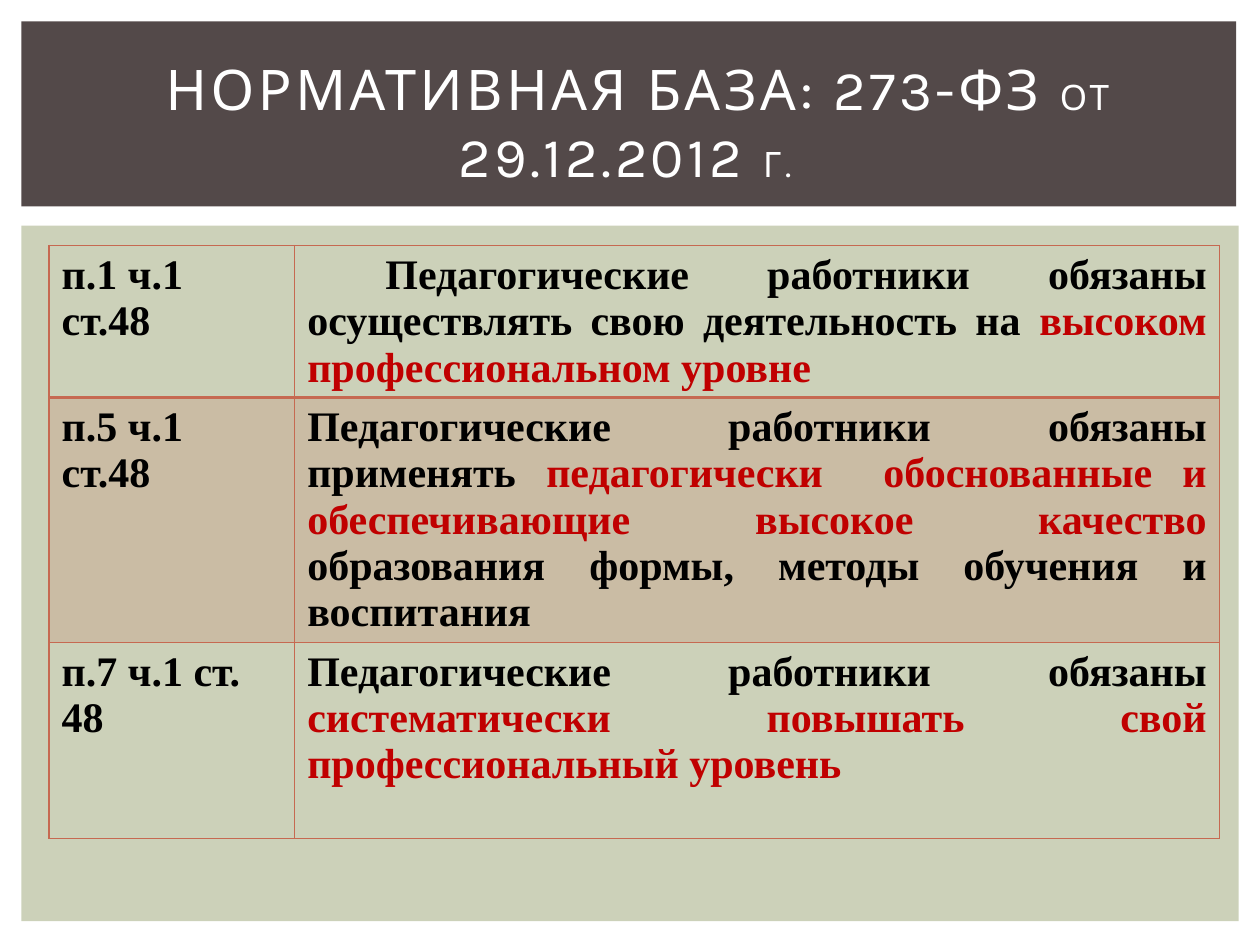
from dataclasses import dataclass

from lxml.etree import SubElement
from pptx import Presentation
from pptx.dml.color import RGBColor
from pptx.enum.shapes import MSO_SHAPE as Preset
from pptx.enum.text import MSO_ANCHOR as Anchor, PP_ALIGN as Align
from pptx.oxml import parse_xml
from pptx.oxml.ns import nsdecls, qn
from pptx.slide import Slide
from pptx.table import _Cell as Cell
from pptx.util import Cm, Pt

WHITE = RGBColor(0xFF, 0xFF, 0xFF)
BLACK = RGBColor(0, 0, 0)
RED = RGBColor(0xC0, 0, 0)
BROWN = RGBColor(0x53, 0x49, 0x49)
SAGE = RGBColor(0xCC, 0xD1, 0xB9)
TERRACOTTA = RGBColor(0xC6, 0x69, 0x51)


@dataclass(frozen=True)
class Panel:
    top: float
    width: float
    height: float
    color: RGBColor


@dataclass(frozen=True)
class Phrase:
    text: str
    color: RGBColor = BLACK


@dataclass(frozen=True)
class Duty:
    clause: str
    phrases: tuple[Phrase, ...]
    height: float
    tinted: bool = False


PANELS = (Panel(4.55, 24.54, 14.02, SAGE), Panel(0.43, 24.49, 3.73, BROWN))

HEADING = (
    (" НОРМАТИВНАЯ БАЗА: 273-ФЗ ", 32),
    ("ОТ", 20),
    (" 29.12.2012 ", 32),
    ("Г. ", 20),
)

DUTIES = (
    Duty("п.1 ч.1 ст.48", (
        Phrase(" Педагогические работники обязаны осуществлять свою деятельность на "),
        Phrase("высоком профессиональном уровне", RED),
    ), 2.82),
    Duty("п.5 ч.1 ст.48", (
        Phrase("Педагогические работники обязаны применять "),
        Phrase("педагогически  обоснованные и обеспечивающие высокое качество ", RED),
        Phrase("образования формы, методы обучения и воспитания"),
    ), 4.04, tinted=True),
    Duty("п.7 ч.1 ст. 48", (
        Phrase("Педагогические работники обязаны "),
        Phrase("систематически повышать свой профессиональный уровень", RED),
    ), 3.96),
)


def draw_panel(slide: Slide, panel: Panel) -> None:
    rect = slide.shapes.add_shape(
        Preset.RECTANGLE, Cm(0.43), Cm(panel.top), Cm(panel.width), Cm(panel.height))
    rect.shadow.inherit = False
    rect.fill.solid()
    rect.fill.fore_color.rgb = panel.color
    rect.line.fill.background()


def draw_heading(slide: Slide) -> None:
    title = slide.shapes.title
    title.left, title.top, title.width, title.height = Cm(1.07), Cm(0.99), Cm(23.29), Cm(2.92)
    slide.shapes._spTree.append(title._element)
    title.text_frame.vertical_anchor = Anchor.MIDDLE
    line = title.text_frame.paragraphs[0]
    line.alignment = Align.CENTER
    for text, size in HEADING:
        run = line.add_run()
        run.text = text
        run.font.name = "Karla"
        run.font.size = Pt(size)
        run.font.color.rgb = WHITE
        run._r.get_or_add_rPr().set("spc", "200")


def write_cell(cell: Cell, phrases: tuple[Phrase, ...], alignment: Align) -> None:
    paragraph = cell.text_frame.paragraphs[0]
    paragraph.alignment = alignment
    for phrase in phrases:
        run = paragraph.add_run()
        run.text = phrase.text
        run.font.name = "Times New Roman"
        run.font.size = Pt(24)
        run.font.bold = True
        run.font.color.rgb = phrase.color


def format_cell(cell: Cell, tinted: bool, widths: dict[str, int]) -> None:
    if tinted:
        cell.fill.solid()
        cell.fill.fore_color.rgb = TERRACOTTA
        color = cell._tc.tcPr.find(f"{qn('a:solidFill')}/{qn('a:srgbClr')}")
        SubElement(color, qn("a:alpha")).set("val", "20000")
    else:
        cell.fill.background()
    for position, (side, width) in enumerate(widths.items()):
        cell._tc.tcPr.insert(position, parse_xml(
            f'<a:ln{side} {nsdecls("a")} w="{Pt(width)}"><a:solidFill>'
            f'<a:srgbClr val="{TERRACOTTA}"/></a:solidFill></a:ln{side}>'))


def draw_duties(slide: Slide) -> None:
    height = sum(duty.height for duty in DUTIES)
    table = slide.shapes.add_table(
        len(DUTIES), 2, Cm(0.99), Cm(4.95), Cm(23.59), Cm(height)).table
    table.first_row = table.horz_banding = False
    table.columns[0].width, table.columns[1].width = Cm(4.95), Cm(18.64)
    for index, duty in enumerate(DUTIES):
        table.rows[index].height = Cm(duty.height)
        widths = {"L": 1, "R": 1, "T": 2 if index == 1 else 1, "B": 2 if index == 0 else 1}
        clause, wording = table.rows[index].cells
        write_cell(clause, (Phrase(duty.clause),), Align.LEFT)
        write_cell(wording, duty.phrases, Align.JUSTIFY)
        for cell in (clause, wording):
            format_cell(cell, duty.tinted, widths)


def main() -> None:
    deck = Presentation()
    deck.slide_width, deck.slide_height = Cm(25.4), Cm(19.05)
    slide = deck.slides.add_slide(deck.slide_layouts[5])
    for panel in PANELS:
        draw_panel(slide, panel)
    draw_heading(slide)
    draw_duties(slide)
    deck.save("out.pptx")


if __name__ == "__main__":
    main()
